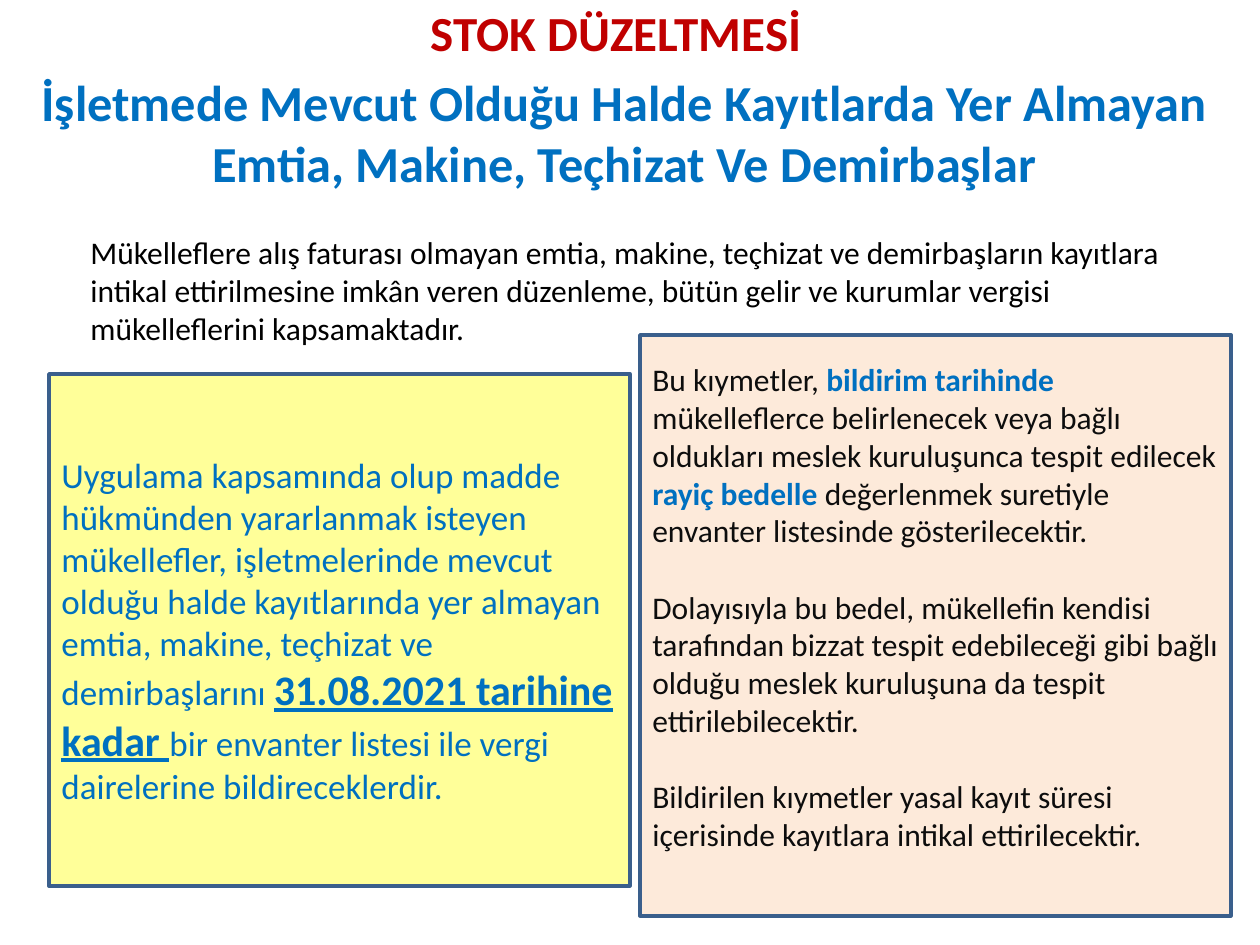
from dataclasses import dataclass

from pptx import Presentation
from pptx.dml.color import RGBColor
from pptx.enum.shapes import MSO_SHAPE as Shape
from pptx.enum.text import MSO_ANCHOR as Anchor, MSO_AUTO_SIZE as AutoSize, PP_ALIGN as Align
from pptx.util import Emu, Pt

EMU_PER_PX = 914400 / 126


@dataclass(frozen=True)
class Theme:
    """Colours, font and type sizes of the slide."""
    font: str = "Calibri"
    red: str = "C00000"
    blue: str = "0070C0"
    black: str = "000000"
    ink: str = "0D0D0D"
    yellow: str = "FFFF99"
    peach: str = "FDEADA"
    border: str = "3A5F8C"
    border_width: float = 2
    title: float = 28.8
    topic: float = 28
    deadline: float = 24
    notice: float = 20
    body: float = 18


THEME = Theme()


def px(length):
    """Turn pixels into EMU."""
    return Emu(round(length * EMU_PER_PX))


def write(frame, paragraphs, size, color, bold=False, align=Align.LEFT,
          anchor=Anchor.MIDDLE, gap=0):
    """Fill a text frame with paragraphs of strings or (text, format) pairs."""
    frame.word_wrap = True
    frame.auto_size = AutoSize.NONE
    frame.vertical_anchor = anchor
    for index, pieces in enumerate(paragraphs):
        paragraph = frame.add_paragraph() if index else frame.paragraphs[0]
        paragraph.alignment = align
        paragraph.space_before = Pt(gap if index else 0)
        for piece in pieces:
            words, special = (piece, {}) if isinstance(piece, str) else piece
            run = paragraph.add_run()
            run.text = words
            run.font.name = THEME.font
            run.font.size = Pt(special.get("size", size))
            run.font.bold = special.get("bold", bold)
            run.font.underline = special.get("underline", False)
            run.font.color.rgb = RGBColor.from_string(special.get("color", color))


def add_text(slide, box, words, **style):
    """Add a text box with one paragraph."""
    label = slide.shapes.add_textbox(*map(px, box))
    write(label.text_frame, [[words]], **style)


def add_panel(slide, box, fill, paragraphs, bottom_inset=6, **style):
    """Add a bordered rectangle holding text."""
    panel = slide.shapes.add_shape(Shape.RECTANGLE, *map(px, box))
    panel.shadow.inherit = False
    panel.fill.solid()
    panel.fill.fore_color.rgb = RGBColor.from_string(fill)
    panel.line.color.rgb = RGBColor.from_string(THEME.border)
    panel.line.width = Pt(THEME.border_width)
    panel.text_frame.margin_bottom = px(bottom_inset)
    write(panel.text_frame, paragraphs, **style)


def main():
    """Build the stock correction slide."""
    deck = Presentation()
    deck.slide_width, deck.slide_height = px(1260), px(945)
    slide = deck.slides.add_slide(deck.slide_layouts[6])

    add_text(slide, (29, 69, 1191, 126),
             "İşletmede Mevcut Olduğu Halde Kayıtlarda Yer Almayan Emtia, "
             "Makine, Teçhizat Ve Demirbaşlar",
             size=THEME.title, color=THEME.blue, bold=True, align=Align.CENTER)
    add_text(slide, (49, 29, 1134, 6), "STOK DÜZELTMESİ",
             size=THEME.topic, color=THEME.red, bold=True, align=Align.CENTER)
    add_text(slide, (78, 227, 1113, 128),
             "Mükelleflere alış faturası olmayan emtia, makine, teçhizat ve demirbaşların "
             "kayıtlara intikal ettirilmesine imkân veren düzenleme, bütün gelir ve kurumlar "
             "vergisi mükelleflerini kapsamaktadır.",
             size=THEME.body, color=THEME.black, anchor=Anchor.TOP)

    deadline = {"size": THEME.deadline, "bold": True, "underline": True}
    add_panel(slide, (49, 374, 581, 512), THEME.yellow, [[
        "Uygulama kapsamında olup madde hükmünden yararlanmak isteyen mükellefler, "
        "işletmelerinde mevcut olduğu halde kayıtlarında yer almayan emtia, makine, "
        "teçhizat ve demirbaşlarını ",
        ("31.08.2021 tarihine kadar ", deadline),
        "bir envanter listesi ile vergi dairelerine bildireceklerdir.",
    ]], size=THEME.notice, color=THEME.blue)

    key_term = {"color": THEME.blue, "bold": True}
    add_panel(slide, (640, 335, 591, 581), THEME.peach, [
        ["Bu kıymetler, ",
         ("bildirim tarihinde ", key_term),
         "mükelleflerce belirlenecek veya bağlı oldukları meslek kuruluşunca "
         "tespit edilecek ",
         ("rayiç bedelle ", key_term),
         "değerlenmek suretiyle envanter listesinde gösterilecektir."],
        ["Dolayısıyla bu bedel, mükellefin kendisi tarafından bizzat tespit edebileceği "
         "gibi bağlı olduğu meslek kuruluşuna da tespit ettirilebilecektir."],
        ["Bildirilen kıymetler yasal kayıt süresi içerisinde kayıtlara intikal "
         "ettirilecektir."],
    ], bottom_inset=44, size=THEME.body, color=THEME.ink, gap=22)

    deck.save("out.pptx")


if __name__ == "__main__":
    main()
